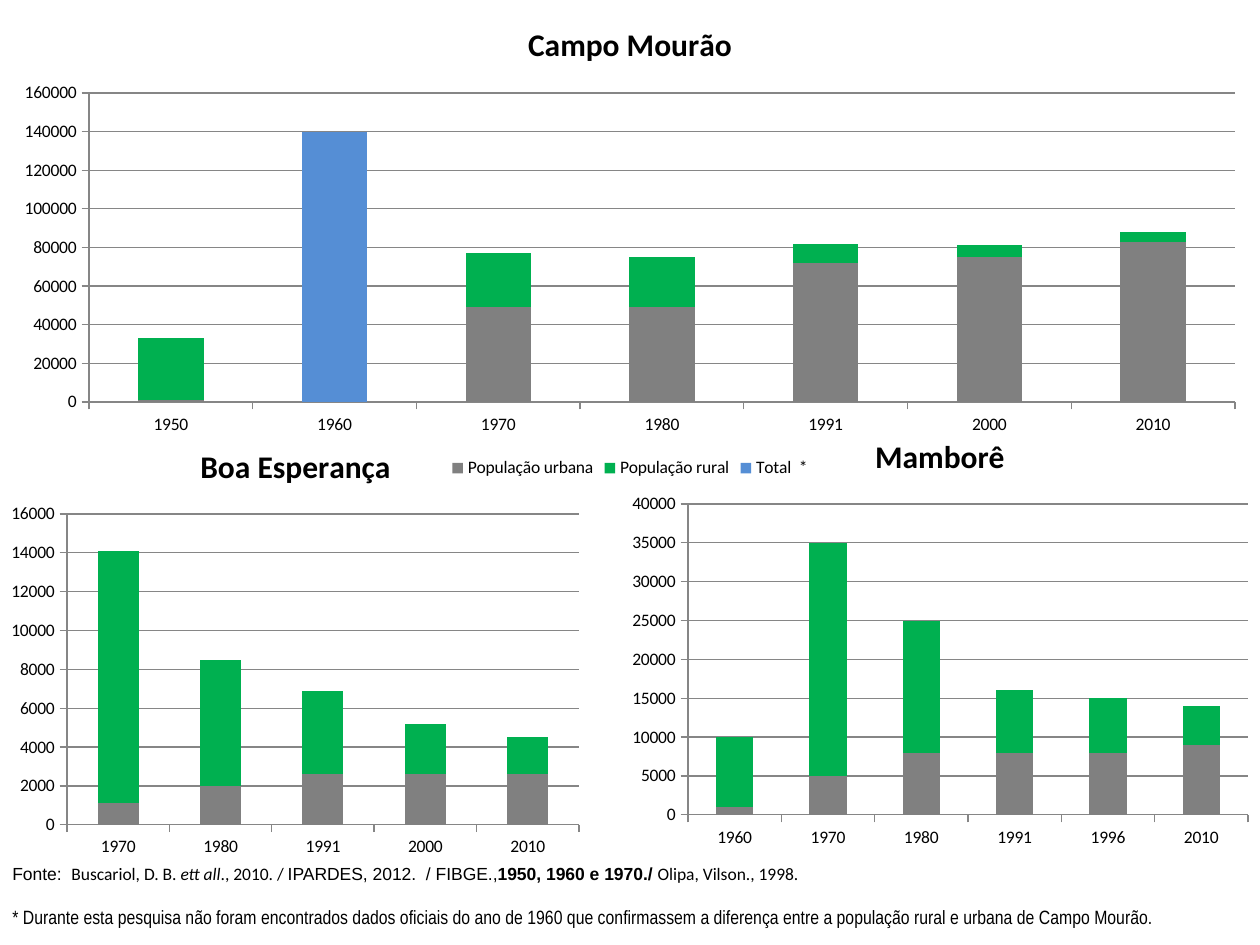
from lxml.etree import SubElement, fromstring
from pptx import Presentation
from pptx.chart.data import CategoryChartData
from pptx.dml.color import RGBColor
from pptx.enum.chart import XL_CHART_TYPE, XL_LEGEND_POSITION, XL_TICK_MARK
from pptx.enum.text import MSO_ANCHOR, PP_ALIGN
from pptx.oxml import parse_xml
from pptx.oxml.ns import nsdecls, qn
from pptx.util import Pt

PX = 914400 / 126
BLACK = RGBColor(0x00, 0x00, 0x00)
AXIS_GRAY = RGBColor(0x86, 0x86, 0x86)
URBAN_GRAY = RGBColor(0x80, 0x80, 0x80)
RURAL_GREEN = RGBColor(0x00, 0xB0, 0x50)
TOTAL_BLUE = RGBColor(0x55, 0x8E, 0xD5)
SERIES_COLORS = (URBAN_GRAY, RURAL_GREEN, TOTAL_BLUE)

CAMPO_MOURAO = {
    "title": "Campo Mourão",
    "years": ("1950", "1960", "1970", "1980", "1991", "2000", "2010"),
    "series": {
        "População urbana": (1000, None, 49000, 49000, 72000, 75000, 83000),
        "População rural": (32000, None, 28000, 26000, 10000, 6000, 5000),
        "Total  *": (None, 140000, None, None, None, None, None),
    },
    "maximum": 160000,
    "step": 20000,
    "legend": True,
}
BOA_ESPERANCA = {
    "title": "Boa Esperança",
    "years": ("1970", "1980", "1991", "2000", "2010"),
    "series": {
        "População urbana": (1100, 2000, 2600, 2600, 2600),
        "População rural": (13000, 6500, 4300, 2600, 1900),
    },
    "maximum": 16000,
    "step": 2000,
    "legend": False,
}
MAMBORE = {
    "title": "Mamborê",
    "years": ("1960", "1970", "1980", "1991", "1996", "2010"),
    "series": {
        "População urbana": (1000, 5000, 8000, 8000, 8000, 9000),
        "População rural": (9000, 30000, 17000, 8000, 7000, 5000),
    },
    "maximum": 40000,
    "step": 5000,
    "legend": False,
}

SOURCE_RUNS = (
    ("Fonte:  ", "Arial", False, False),
    ("Buscariol, D. B. ", "Calibri", False, False),
    ("ett all", "Calibri", False, True),
    ("., 2010. / ", "Calibri", False, False),
    ("IPARDES, 2012.  / FIBGE.,", "Arial", False, False),
    ("1950, 1960 e 1970./ ", "Arial", True, False),
    ("Olipa, Vilson., 1998.", "Calibri", False, False),
)
FOOTNOTE = (
    "* Durante esta pesquisa não foram encontrados dados oficiais do ano de 1960 "
    "que confirmassem a diferença entre a população rural e urbana de Campo Mourão."
)


def px(length):
    """Turn a length in px into EMU."""
    return round(length * PX)


def set_font(font, size, name, bold=False, italic=False):
    """Give a font its size, name, style and the text colour."""
    font.size = Pt(size)
    font.name = name
    font.bold = bold
    font.italic = italic
    font.color.rgb = BLACK


def place_plot(chart, box, plot):
    """Fix the inner plot area, given relative to the chart box."""
    plot_area = chart.element.find(".//" + qn("c:plotArea"))
    for layout in plot_area.findall(qn("c:layout")):
        plot_area.remove(layout)
    layout = parse_xml(f"<c:layout {nsdecls('c')}><c:manualLayout/></c:layout>")
    left, top, width, height = plot
    entries = (
        ("layoutTarget", "inner"), ("xMode", "edge"), ("yMode", "edge"),
        ("x", left / box[2]), ("y", top / box[3]),
        ("w", width / box[2]), ("h", height / box[3]),
    )
    for tag, value in entries:
        SubElement(layout[0], qn("c:" + tag)).set("val", str(value))
    plot_area.insert(0, layout)


def style_axes(chart, maximum, step):
    """Set the scale, tick marks and lines of both axes."""
    value_axis = chart.value_axis
    value_axis.minimum_scale = 0
    value_axis.maximum_scale = maximum
    value_axis.major_unit = step
    value_axis.has_major_gridlines = True
    for axis in (value_axis, chart.category_axis):
        axis.major_tick_mark = XL_TICK_MARK.OUTSIDE
        axis.minor_tick_mark = XL_TICK_MARK.NONE
    for line in (value_axis.format.line, chart.category_axis.format.line,
                 value_axis.major_gridlines.format.line):
        line.color.rgb = AXIS_GRAY
        line.width = Pt(0.75)


def add_population_chart(slide, town, box, plot):
    """Add the stacked population columns of one town in the given box."""
    data = CategoryChartData(number_format="General")
    data.categories = town["years"]
    for name, values in town["series"].items():
        data.add_series(name, values)
    chart = slide.shapes.add_chart(
        XL_CHART_TYPE.COLUMN_STACKED, *map(px, box), data).chart
    set_font(chart.font, 10, "Calibri")

    chart.has_title = True
    title_frame = chart.chart_title.text_frame
    title_frame.text = town["title"]
    set_font(title_frame.paragraphs[0].runs[0].font, 18, "Calibri", bold=True)

    chart.has_legend = town["legend"]
    if town["legend"]:
        chart.legend.position = XL_LEGEND_POSITION.BOTTOM
        chart.legend.include_in_layout = False

    columns = chart.plots[0]
    columns.vary_by_categories = False
    columns.overlap = 100
    columns.gap_width = 150
    for series, color in zip(columns.series, SERIES_COLORS):
        series.format.fill.solid()
        series.format.fill.fore_color.rgb = color
    style_axes(chart, town["maximum"], town["step"])
    place_plot(chart, box, plot)
    chart.element.find(qn("c:chart")).addnext(fromstring(
        f"<c:spPr {nsdecls('c', 'a')}><a:noFill/><a:ln><a:noFill/></a:ln></c:spPr>"))


def add_sources(slide, box):
    """Add the line of sources and the footnote in the given box."""
    text_frame = slide.shapes.add_textbox(*map(px, box)).text_frame
    text_frame.word_wrap = True
    text_frame.vertical_anchor = MSO_ANCHOR.MIDDLE
    sources = text_frame.paragraphs[0]
    for text, name, bold, italic in SOURCE_RUNS:
        run = sources.add_run()
        run.text = text
        set_font(run.font, 10, name, bold, italic)
    footnote = text_frame.add_paragraph()
    footnote.text = FOOTNOTE
    footnote.space_before = Pt(12)
    set_font(footnote.runs[0].font, 11, "Arial Narrow")
    for paragraph in (sources, footnote):
        paragraph.alignment = PP_ALIGN.JUSTIFY


def main():
    """Build the population slide and save it."""
    presentation = Presentation()
    presentation.slide_width = px(1260)
    presentation.slide_height = px(945)
    slide = presentation.slides.add_slide(presentation.slide_layouts[6])
    add_population_chart(slide, BOA_ESPERANCA, (0, 423, 591, 444), (67, 91, 512, 311))
    add_population_chart(slide, MAMBORE, (620, 413, 640, 444), (68, 91, 560, 311))
    add_population_chart(slide, CAMPO_MOURAO, (0, 0, 1260, 483), (89, 93, 1146, 309))
    add_sources(slide, (0, 857, 1260, 78))
    presentation.save("out.pptx")


if __name__ == "__main__":
    main()
